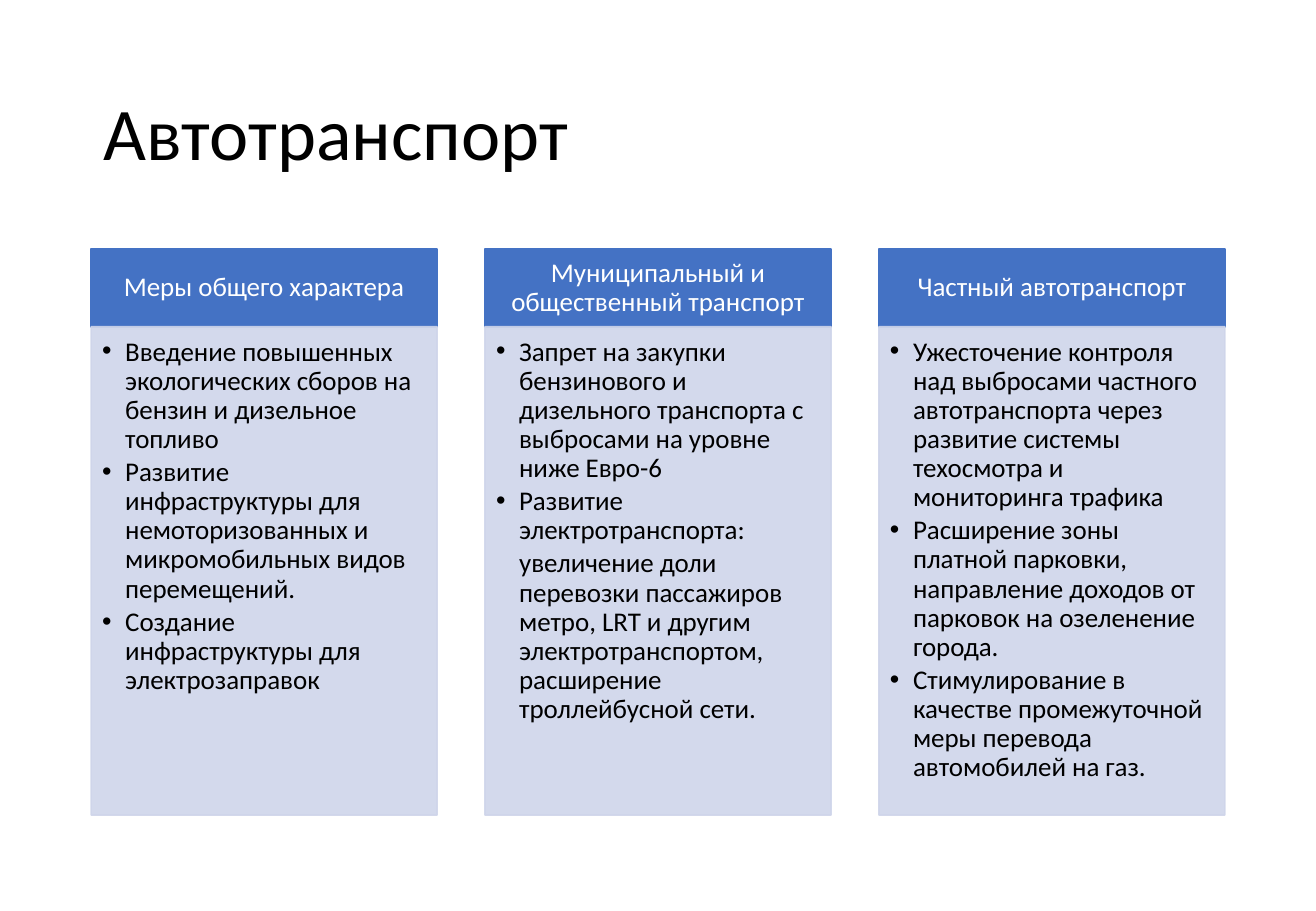
from dataclasses import dataclass

from lxml.etree import SubElement
from pptx import Presentation
from pptx.dml.color import RGBColor
from pptx.enum.shapes import MSO_SHAPE
from pptx.enum.text import MSO_ANCHOR, PP_ALIGN
from pptx.oxml.ns import qn
from pptx.util import Inches, Pt

TITLE = "Автотранспорт"
COLUMNS = [
    ("Меры общего характера", [
        ("•", "Введение повышенных экологических сборов на бензин и дизельное топливо"),
        ("•", "Развитие инфраструктуры для немоторизованных и микромобильных видов перемещений."),
        ("•", "Создание инфраструктуры для электрозаправок"),
    ]),
    ("Муниципальный и общественный транспорт", [
        ("•", "Запрет на закупки бензинового и дизельного транспорта с выбросами на уровне ниже Евро-6"),
        ("•", "Развитие электротранспорта:"),
        ("", "увеличение доли перевозки пассажиров метро, LRT и другим электротранспортом, "
             "расширение троллейбусной сети."),
    ]),
    ("Частный автотранспорт", [
        ("•", "Ужесточение контроля над выбросами частного автотранспорта через развитие "
              "системы техосмотра и мониторинга трафика"),
        ("•", "Расширение зоны платной парковки, направление доходов от парковок на озеленение города."),
        ("•", "Стимулирование в качестве промежуточной меры перевода автомобилей на газ."),
    ]),
]


@dataclass(frozen=True)
class Theme:
    font: str = "Calibri"
    title_size: int = 44
    text_size: int = 16
    dark: str = "000000"
    light: str = "FFFFFF"
    header: str = "4472C4"
    body: str = "CFD5EA"


THEME = Theme()
SLIDE_WIDTH, SLIDE_HEIGHT = 10.83, 7.5
MARGIN, GAP = 0.75, 0.395
COLUMN_WIDTH = (SLIDE_WIDTH - 2 * MARGIN - GAP * (len(COLUMNS) - 1)) / len(COLUMNS)
HEADER_TOP, HEADER_HEIGHT, BODY_HEIGHT = 2.05, 0.64, 4.02
BULLET_INDENT = 0.19


def write_text(frame, items, size, color, align=PP_ALIGN.LEFT, anchor=MSO_ANCHOR.MIDDLE,
               insets=(0.1, 0.05, 0.1, 0.05), indent=0, space_after=0):
    frame.word_wrap = True
    frame.vertical_anchor = anchor
    (frame.margin_left, frame.margin_top,
     frame.margin_right, frame.margin_bottom) = map(Inches, insets)
    for index, (bullet, text) in enumerate(items):
        paragraph = frame.add_paragraph() if index else frame.paragraphs[0]
        paragraph.alignment = align
        paragraph.line_spacing = 0.9
        paragraph.space_before = Pt(0)
        paragraph.space_after = Pt(space_after)
        properties = paragraph._p.get_or_add_pPr()
        properties.set("marL", str(Inches(indent)))
        properties.set("indent", str(-Inches(indent) if bullet else 0))
        if bullet:
            SubElement(properties, qn("a:buFont"), typeface="Arial")
            SubElement(properties, qn("a:buChar"), char=bullet)
        else:
            SubElement(properties, qn("a:buNone"))
        run = paragraph.add_run()
        run.text = text
        run.font.name = THEME.font
        run.font.size = Pt(size)
        run.font.color.rgb = RGBColor.from_string(color)


def add_panel(slide, left, top, height, color, opacity=100):
    shape = slide.shapes.add_shape(MSO_SHAPE.RECTANGLE, Inches(left), Inches(top),
                                   Inches(COLUMN_WIDTH), Inches(height))
    shape.shadow.inherit = False
    shape.line.width = Pt(1)
    shape.fill.solid()
    for fill in (shape.fill, shape.line.fill):
        fill.solid()
        fill.fore_color.rgb = RGBColor.from_string(color)
    if opacity < 100:
        for element in shape._element.spPr.iter(qn("a:srgbClr")):
            SubElement(element, qn("a:alpha"), val=str(opacity * 1000))
    return shape.text_frame


def main():
    presentation = Presentation()
    presentation.slide_width = Inches(SLIDE_WIDTH)
    presentation.slide_height = Inches(SLIDE_HEIGHT)
    slide = presentation.slides.add_slide(presentation.slide_layouts[5])

    title = slide.shapes.title
    title.left, title.top = Inches(MARGIN), Inches(0.4)
    title.width, title.height = Inches(SLIDE_WIDTH - 2 * MARGIN), Inches(1.45)
    write_text(title.text_frame, [("", TITLE)], THEME.title_size, THEME.dark)

    for index, (heading, measures) in enumerate(COLUMNS):
        left = MARGIN + index * (COLUMN_WIDTH + GAP)
        header = add_panel(slide, left, HEADER_TOP, HEADER_HEIGHT, THEME.header)
        write_text(header, [("", heading)], THEME.text_size, THEME.light,
                   align=PP_ALIGN.CENTER, insets=(0.12, 0.07, 0.12, 0.07))
        body = add_panel(slide, left, HEADER_TOP + HEADER_HEIGHT, BODY_HEIGHT,
                         THEME.body, opacity=90)
        write_text(body, measures, THEME.text_size, THEME.dark, anchor=MSO_ANCHOR.TOP,
                   insets=(0.09, 0.09, 0.12, 0.14), indent=BULLET_INDENT, space_after=2.4)

    presentation.save("out.pptx")


if __name__ == "__main__":
    main()
